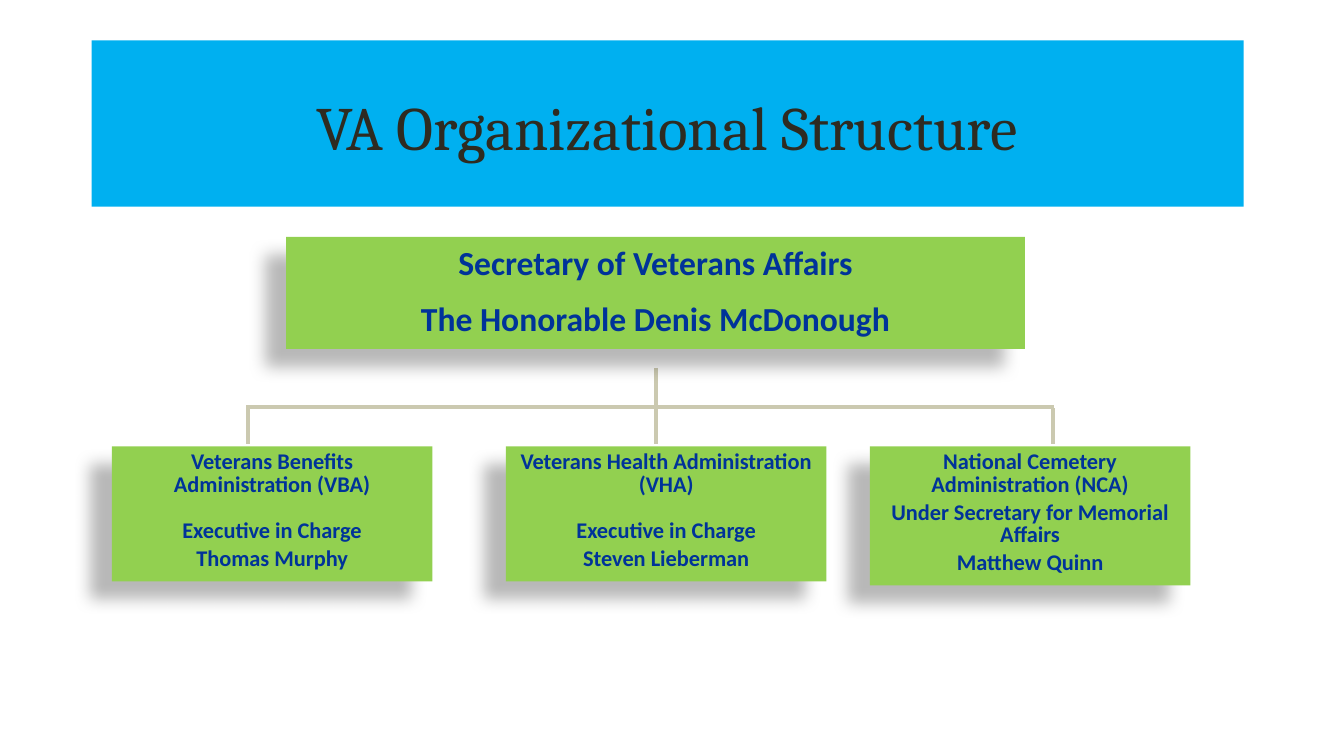
from lxml.etree import SubElement as Sub
from pptx import Presentation
from pptx.dml.color import RGBColor as Rgb
from pptx.enum.shapes import MSO_CONNECTOR as Link, MSO_SHAPE as Form
from pptx.enum.text import MSO_ANCHOR as Anchor, PP_ALIGN as Align
from pptx.oxml.ns import qn
from pptx.util import Cm, Pt

HUES = {"band": "00B0F0", "title": "2E2B21", "box": "92D050",
        "text": "003399", "line": "CBC9B0", "shade": "000000"}
TOP = 11.25
WIDE = 8.08
UNITS = [
    (2.82, 3.4, ["Veterans Benefits Administration (VBA)",
                 "Executive in Charge", "Thomas Murphy"], [0, 16.5, 3.5]),
    (12.75, 3.4, ["Veterans Health Administration (VHA)",
                  "Executive in Charge", "Steven Lieberman"], [0, 16.5, 3.5]),
    (21.92, 3.5, ["National Cemetery Administration (NCA)",
                  "Under Secretary for Memorial Affairs",
                  "Matthew Quinn"], [0, 3.5, 3.5]),
]


def hue(name):
    """Return the named colour."""
    return Rgb.from_string(HUES[name])


def paint(shape, name):
    """Fill a shape with one colour and hide its outline."""
    shape.fill.solid()
    shape.fill.fore_color.rgb = hue(name)
    shape.line.fill.background()


def write(frame, lines, gaps=(0,), size=16, font="Calibri", tint="text",
          bold=True, pitch=1.0, anchor=Anchor.TOP):
    """Write centred paragraphs, each with its own gap above."""
    frame.word_wrap = True
    frame.vertical_anchor = anchor
    for i, (line, gap) in enumerate(zip(lines, gaps)):
        para = frame.paragraphs[0] if i == 0 else frame.add_paragraph()
        para.alignment = Align.CENTER
        para.line_spacing = pitch
        para.space_before = Pt(gap)
        run = para.add_run()
        run.text = line
        run.font.size = Pt(size)
        run.font.name = font
        run.font.bold = bold
        run.font.color.rgb = hue(tint)


def shade(shape):
    """Cast a soft shadow to the lower left."""
    shape.shadow.inherit = False
    fx = shape._element.spPr.find(qn("a:effectLst"))
    cast = Sub(fx, qn("a:outerShdw"), blurRad=str(Pt(11.8)),
               dist=str(Pt(19.7)), dir=str(141 * 60000),
               algn="ctr", rotWithShape="0")
    color = Sub(cast, qn("a:srgbClr"), val=HUES["shade"])
    Sub(color, qn("a:alpha"), val="28000")


def add_box(slide, x, y, w, h, lines, gaps, **style):
    """Add a shadowed box with its text."""
    box = slide.shapes.add_shape(Form.RECTANGLE, Cm(x), Cm(y), Cm(w), Cm(h))
    paint(box, "box")
    shade(box)
    write(box.text_frame, lines, gaps, **style)


def add_line(slide, x1, y1, x2, y2):
    """Add one straight branch of the chart."""
    line = slide.shapes.add_connector(
        Link.STRAIGHT, Cm(x1), Cm(y1), Cm(x2), Cm(y2))
    line.line.color.rgb = hue("line")
    line.line.width = Pt(3)
    Sub(line._element.spPr, qn("a:effectLst"))


def set_title(slide, text):
    """Place and format the title band."""
    title = slide.shapes.title
    title.left, title.top = Cm(2.31), Cm(1.02)
    title.width, title.height = Cm(29.03), Cm(4.19)
    paint(title, "band")
    title.text_frame.margin_top = Cm(0.24)
    write(title.text_frame, [text], size=44, font="Cambria", tint="title",
          bold=False, anchor=Anchor.MIDDLE)


def main():
    """Build the slide and save it."""
    deck = Presentation()
    deck.slide_width, deck.slide_height = Cm(33.87), Cm(19.05)
    slide = deck.slides.add_slide(deck.slide_layouts[5])
    set_title(slide, "VA Organizational Structure")
    add_line(slide, 16.54, 9.27, 16.54, 11.2)
    add_line(slide, 6.2, 10.26, 26.57, 10.26)
    for x in (6.25, 26.54):
        add_line(slide, x, 10.29, x, 11.2)
    add_box(slide, 7.21, 5.97, 18.62, 2.82,
            ["Secretary of Veterans Affairs",
             "The Honorable Denis McDonough"], [0, 11.5], size=24)
    for x, high, lines, gaps in UNITS:
        add_box(slide, x, TOP, WIDE, high, lines, gaps, pitch=0.85)
    deck.save("out.pptx")


if __name__ == "__main__":
    main()
